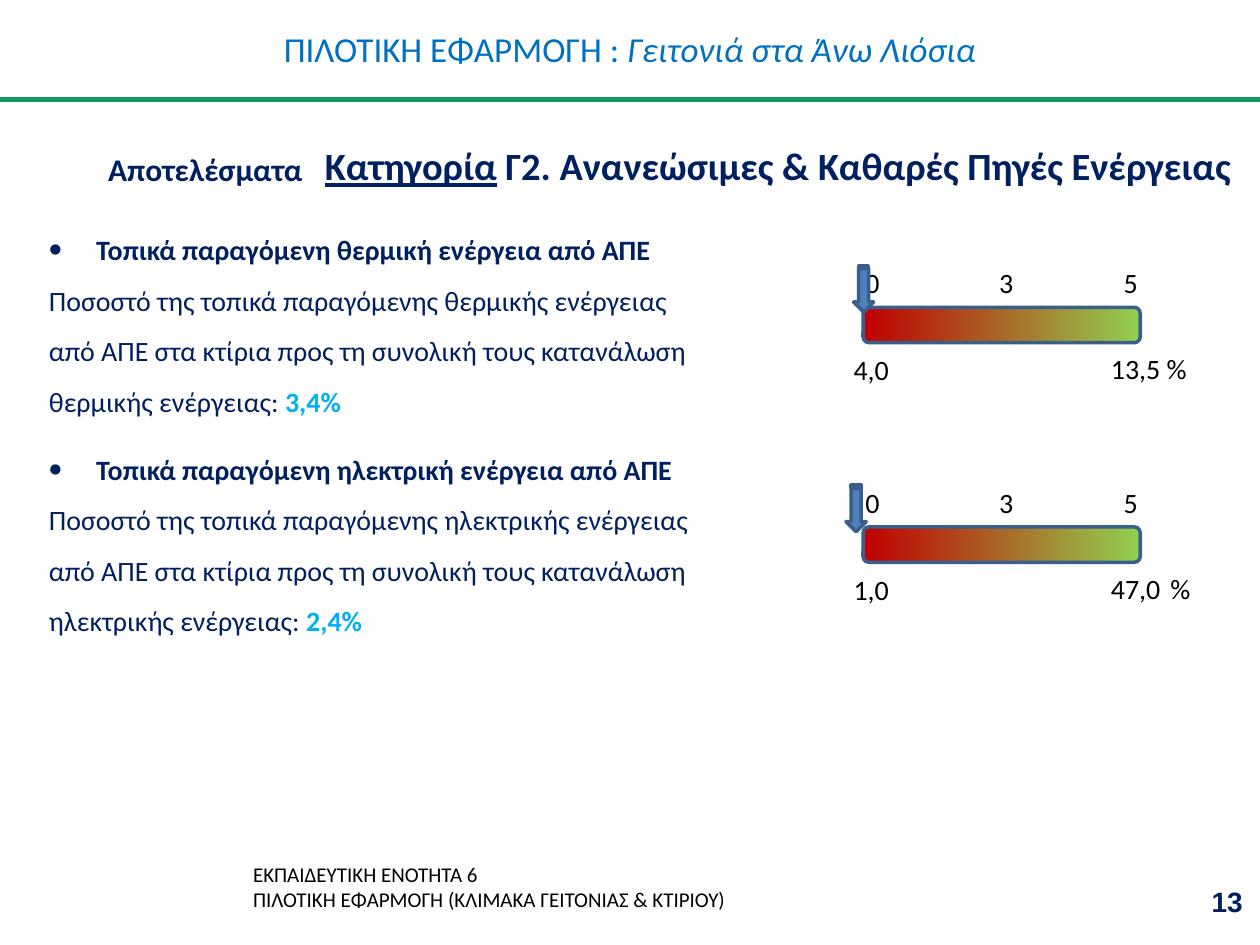
from dataclasses import dataclass
from typing import NamedTuple

from lxml.etree import SubElement
from pptx import Presentation
from pptx.dml.color import RGBColor as Rgb
from pptx.enum.shapes import MSO_CONNECTOR as Link, MSO_SHAPE as Kind
from pptx.enum.text import MSO_ANCHOR as Anchor, MSO_AUTO_SIZE as Auto, PP_ALIGN as Align
from pptx.oxml.ns import qn
from pptx.util import Pt


@dataclass(frozen=True)
class Theme:
    font: str = "Calibri"
    alt: str = "Arial"
    black: str = "000000"
    navy: str = "002060"
    blue: str = "0070C0"
    cyan: str = "00B0F0"
    green: str = "159961"
    low: str = "C00000"
    high: str = "92D050"
    arrow: str = "4F81BD"
    edge: str = "3A5F8C"
    small: float = 12
    body: float = 16
    sub: float = 18
    title: float = 20
    head: float = 22


T = Theme()


class Box(NamedTuple):
    x: float
    y: float
    w: float
    h: float

    def pts(self):
        return [Pt(v) for v in self]


class Run(NamedTuple):
    text: str
    size: float = T.body
    color: str = T.navy
    bold: bool = False
    italic: bool = False
    under: bool = False
    font: str = T.font


class Topic(NamedTuple):
    head: str
    lines: list[str]
    value: str
    low: str
    high: str
    mark: float  # left of the arrow
    unit: float  # left of the percent sign


TOPICS = [
    Topic("Τοπικά παραγόμενη θερμική ενέργεια από ΑΠΕ",
          ["Ποσοστό της τοπικά παραγόμενης θερμικής ενέργειας",
           "από ΑΠΕ στα κτίρια προς τη συνολική τους κατανάλωση",
           "θερμικής ενέργειας: "],
          "3,4%", "4,0", "13,5", 480.2, 659.5),
    Topic("Τοπικά παραγόμενη ηλεκτρική ενέργεια από ΑΠΕ",
          ["Ποσοστό της τοπικά παραγόμενης ηλεκτρικής ενέργειας",
           "από ΑΠΕ στα κτίρια προς τη συνολική τους κατανάλωση",
           "ηλεκτρικής ενέργειας: "],
          "2,4%", "1,0", "47,0", 475.9, 661.7),
]
TOP, PITCH = 129.6, 125.5
SCALE = [("0", 487.4), ("3", 563.8), ("5", 635)]


def put(para, *runs: Run) -> None:
    for item in runs:
        run = para.add_run()
        run.text = item.text
        font = run.font
        font.name, font.size = item.font, Pt(item.size)
        font.bold, font.italic, font.underline = item.bold, item.italic, item.under
        font.color.rgb = Rgb.from_string(item.color)


def add_text(shapes, box: Box, *runs: Run, align=Align.LEFT, anchor=Anchor.TOP,
             wrap: bool = True, grow: bool = True):
    frame = shapes.add_textbox(*box.pts()).text_frame
    frame.word_wrap = wrap
    frame.auto_size = Auto.SHAPE_TO_FIT_TEXT if grow else Auto.NONE
    frame.vertical_anchor = anchor
    para = frame.paragraphs[0]
    para.alignment = align
    put(para, *runs)
    return frame


def add_label(shapes, text: str, x: float, y: float, w: float, align=Align.LEFT) -> None:
    add_text(shapes, Box(x, y, w, 26.6), Run(text, color=T.black), align=align, wrap=False)


def add_shape(shapes, kind, box: Box):
    shape = shapes.add_shape(kind, *box.pts())
    shape.shadow.inherit = False
    shape.line.color.rgb = Rgb.from_string(T.edge)
    shape.line.width = Pt(2)
    return shape


def add_bullet(para) -> None:
    props = para._p.get_or_add_pPr()
    props.set("marL", str(Pt(27)))
    props.set("indent", str(-Pt(27)))
    SubElement(props, qn("a:buSzPct"), val="135000")
    SubElement(props, qn("a:buFont"), typeface=T.alt)
    SubElement(props, qn("a:buChar"), char="•")


def add_gauge(shapes, topic: Topic, top: float) -> None:
    bar = add_shape(shapes, Kind.ROUNDED_RECTANGLE, Box(493.2, top + 46, 158.4, 20.2))
    bar.fill.gradient()
    bar.fill.gradient_angle = 0
    for stop, color in zip(bar.fill.gradient_stops, (T.low, T.high)):
        stop.color.rgb = Rgb.from_string(color)
    for text, x in SCALE:
        add_label(shapes, text, x, top + 18.7, 23)
    add_label(shapes, topic.low, 480.2, top + 68.6, 35.3, Align.CENTER)
    add_label(shapes, "%", topic.unit, top + 67.7, 26)
    add_label(shapes, topic.high, 627.8, top + 67.7, 43.2)
    arrow = add_shape(shapes, Kind.STRIPED_RIGHT_ARROW, Box(topic.mark, top + 29.7, 26.6, 11.5))
    arrow.rotation = 90
    arrow.fill.solid()
    arrow.fill.fore_color.rgb = Rgb.from_string(T.arrow)


def add_topic(shapes, topic: Topic, top: float) -> None:
    group = shapes.add_group_shape().shapes
    frame = add_text(group, Box(20.9, top, 699.1, 113.8), Run(topic.head, bold=True))
    add_bullet(frame.paragraphs[0])
    for line in topic.lines:
        para = frame.add_paragraph()
        para.line_spacing = 1.5
        put(para, Run(line))
    put(para, Run(topic.value, color=T.cyan, bold=True))
    add_gauge(group, topic, top)


def add_rule(shapes, y: float, width: float) -> None:
    rule = shapes.add_connector(Link.STRAIGHT, Pt(0), Pt(y), Pt(width), Pt(y))
    rule.line.color.rgb = Rgb.from_string(T.green)
    rule.line.width = Pt(3)
    SubElement(rule._element.spPr, qn("a:effectLst"))


def add_footer(shapes) -> None:
    frame = add_text(shapes, Box(137.5, 488.9, 488.9, 36),
                     Run("ΕΚΠΑΙΔΕΥΤΙΚΗ ΕΝΟΤΗΤΑ 6", T.small, T.black))
    para = frame.paragraphs[0]
    para.add_line_break()
    # the break carries its own size, or it would make the line taller
    SubElement(para._p.find(qn("a:br")), qn("a:rPr"), sz=str(int(T.small * 100)))
    put(para, Run("ΠΙΛΟΤΙΚΗ ΕΦΑΡΜΟΓΗ (ΚΛΙΜΑΚΑ ΓΕΙΤΟΝΙΑΣ & ΚΤΙΡΙΟΥ)", T.small, T.black))


def main() -> None:
    deck = Presentation()
    deck.slide_width, deck.slide_height = Pt(720), Pt(540)
    shapes = deck.slides.add_slide(deck.slide_layouts[6]).shapes
    add_rule(shapes, 56.7, 720)
    add_footer(shapes)
    add_text(shapes, Box(0, 0, 720, 55.4),
             Run("ΠΙΛΟΤΙΚΗ ΕΦΑΡΜΟΓΗ : ", T.title, T.blue),
             Run("Γειτονιά στα Άνω Λιόσια", T.title, T.blue, italic=True),
             align=Align.CENTER, anchor=Anchor.MIDDLE, grow=False)
    add_text(shapes, Box(178.6, 77.8, 541.4, 33.8),
             Run("Κατηγορία", T.head, bold=True, under=True),
             Run(" Γ2. Ανανεώσιμες & Καθαρές Πηγές Ενέργειας", T.head, bold=True))
    for i, topic in enumerate(TOPICS):
        add_topic(shapes, topic, TOP + i * PITCH)
    add_text(shapes, Box(54.7, 82.1, 130.3, 28.8), Run("Αποτελέσματα", T.sub, bold=True))
    add_text(shapes, Box(549.4, 500.4, 167.8, 28.8), Run("13", bold=True, font=T.alt),
             align=Align.RIGHT, anchor=Anchor.MIDDLE, grow=False)
    deck.save("out.pptx")


if __name__ == "__main__":
    main()
